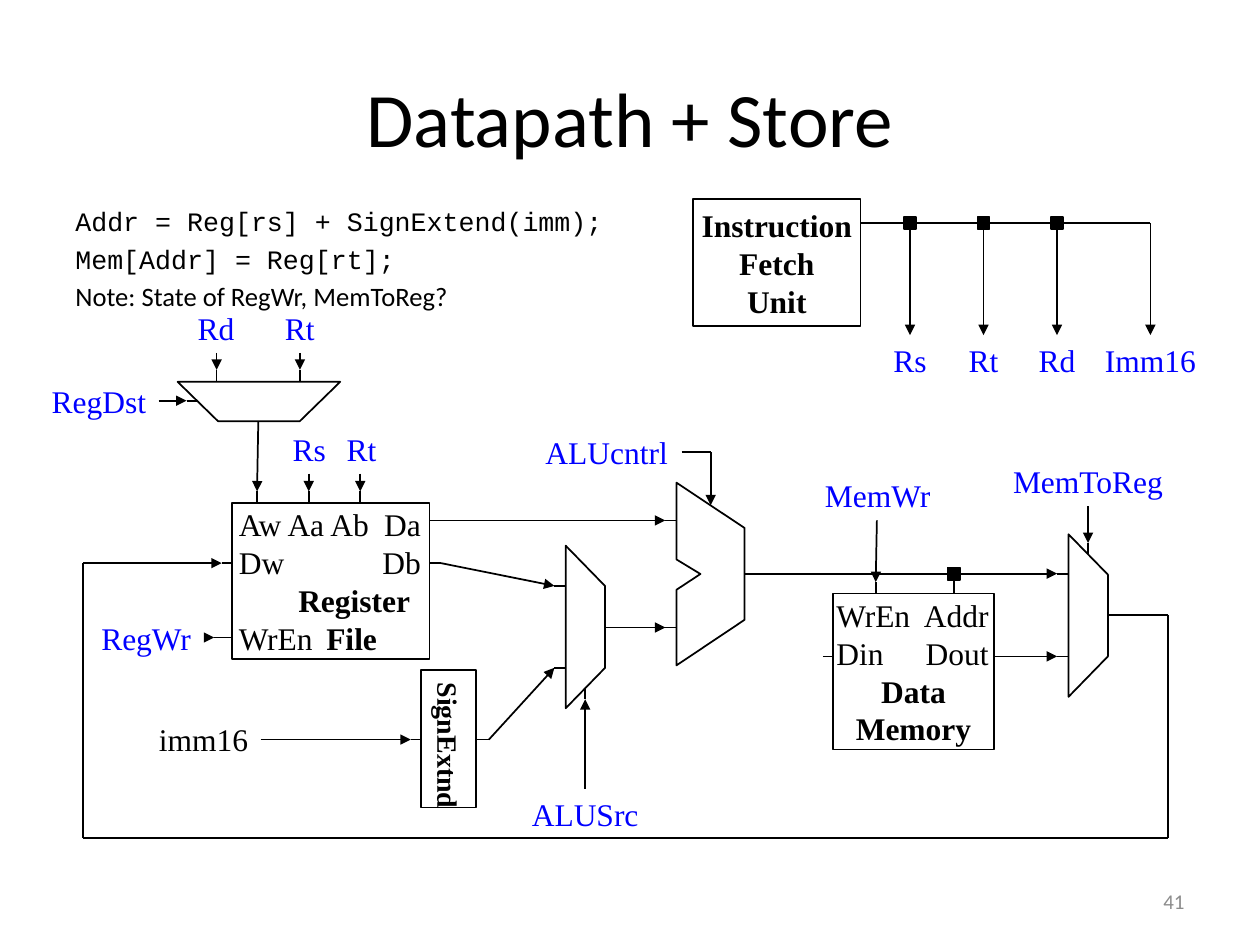
import lxml.etree
import pptx
import pptx.dml.color
import pptx.enum.shapes
import pptx.enum.text
import pptx.oxml.ns
import pptx.util

Pt = pptx.util.Pt
qn = pptx.oxml.ns.qn
ALIGN = pptx.enum.text.PP_ALIGN
MIDDLE = pptx.enum.text.MSO_ANCHOR.MIDDLE
COLORS = {"ink": "000000", "signal": "0000FF", "paper": "FFFFFF", "muted": "8C8C8C"}
SERIF, SANS, MONO = "Times New Roman", "Calibri", "Courier New"


def rgb(name):
    return pptx.dml.color.RGBColor.from_string(COLORS[name])


class DatapathSlide:
    MUX_LENGTH, MUX_DEPTH, MUX_SLANT = 92.9, 22.5, 23.1
    LABEL_HEIGHT, JUNCTION_SIZE = 28.8, 7

    def __init__(self, slide):
        self.shapes = slide.shapes

    def style(self, paragraph, font=SERIF, size=18, color="ink", bold=False, align=ALIGN.CENTER):
        paragraph.alignment = align
        paragraph.font.name = font
        paragraph.font.size = Pt(size)
        paragraph.font.bold = bold
        paragraph.font.color.rgb = rgb(color)

    def outline(self, shape, fill="paper"):
        shape.shadow.inherit = False
        shape.fill.solid()
        shape.fill.fore_color.rgb = rgb(fill)
        shape.line.color.rgb = rgb("ink")
        shape.line.width = Pt(1)

    def text(self, left, top, width, height, content, wrap=True, anchor=None, **style):
        frame = self.shapes.add_textbox(Pt(left), Pt(top), Pt(width), Pt(height)).text_frame
        frame.word_wrap = wrap
        if anchor is not None:
            frame.vertical_anchor = anchor
        frame.text = content
        self.style(frame.paragraphs[0], **style)
        return frame

    def label(self, center, top, width, name, color="signal"):
        self.text(center - width / 2, top, width, self.LABEL_HEIGHT, name, wrap=False, color=color)

    def box(self, left, top, width, height, fill="paper"):
        rectangle = self.shapes.add_shape(pptx.enum.shapes.MSO_SHAPE.RECTANGLE,
                                          Pt(left), Pt(top), Pt(width), Pt(height))
        self.outline(rectangle, fill)
        return rectangle

    def block(self, left, top, width, height, rows, inset=None, size=18):
        """Rows are (text, bold flags per tab-separated part, tab position, tab alignment)."""
        frame = self.box(left, top, width, height).text_frame
        frame.vertical_anchor = MIDDLE
        frame.word_wrap = inset is not None
        if inset is not None:
            frame.margin_left = frame.margin_right = Pt(inset)
        for index, (content, bolds, tab, tab_align) in enumerate(rows):
            row = frame.paragraphs[0] if index == 0 else frame.add_paragraph()
            if tab:
                stops = lxml.etree.SubElement(row._p.get_or_add_pPr(), qn("a:tabLst"))
                lxml.etree.SubElement(stops, qn("a:tab"), pos=str(int(Pt(tab))), algn=tab_align)
            if len(set(bolds)) == 1:
                row.add_run().text = content
            else:
                first, second = content.split("\t")
                for part, bold in zip((first + "\t", second), bolds):
                    run = row.add_run()
                    run.text = part
                    run.font.bold = bold
            self.style(row, size=size, bold=bolds[0],
                       align=ALIGN.LEFT if tab else ALIGN.CENTER)
        return frame

    def junction(self, x, y):
        half = self.JUNCTION_SIZE / 2
        self.box(x - half, y - half, self.JUNCTION_SIZE, self.JUNCTION_SIZE, fill="ink")

    def polygon(self, points):
        builder = self.shapes.build_freeform(Pt(points[0][0]), Pt(points[0][1]))
        builder.add_line_segments([(Pt(x), Pt(y)) for x, y in points[1:]], close=True)
        self.outline(builder.convert_to_shape())

    def mux(self, left, top, upright=True):
        """Trapezoid with its long side at the left if upright, else at the top."""
        profile = [(0, 0), (self.MUX_DEPTH, self.MUX_SLANT),
                   (self.MUX_DEPTH, self.MUX_LENGTH - self.MUX_SLANT), (0, self.MUX_LENGTH)]
        self.polygon([(left + d, top + s) if upright else (left + s, top + d)
                      for d, s in profile])

    def wire(self, *points, arrow=False):
        for number, (start, end) in enumerate(zip(points, points[1:]), 1):
            line = self.shapes.add_connector(pptx.enum.shapes.MSO_CONNECTOR.STRAIGHT,
                                             *(Pt(v) for v in start + end))
            line.line.color.rgb = rgb("ink")
            line.line.width = Pt(1)
            if arrow and number == len(points) - 1:
                lxml.etree.SubElement(line.line._get_or_add_ln(), qn("a:tailEnd"), type="triangle")
            lxml.etree.SubElement(line._element.spPr, qn("a:effectLst"))

    def input(self, *points):
        """Wire with its arrowhead at the start of the last stretch, the pin."""
        self.wire(*points[:-1], arrow=True)
        self.wire(*points[-2:])


def add_texts(page):
    page.text(36, 21.6, 648, 90, "Datapath + Store", anchor=MIDDLE, font=SANS, size=44)
    page.text(516.2, 500.4, 167.8, 28.8, "41", anchor=MIDDLE, font=SANS, size=12,
              color="muted", align=ALIGN.RIGHT)
    notes = page.text(36, 113.8, 347.8, 59.8, "Addr = Reg[rs] + SignExtend(imm);\n"
                      "Mem[Addr] = Reg[rt];\nNote: State of RegWr, MemToReg?")
    for note, font in zip(notes.paragraphs, (MONO, MONO, SANS)):
        page.style(note, font=font, size=15.2, align=ALIGN.LEFT)
        note.space_before = Pt(3)
    for name in (("RegDst", 56.5, 214.6, 68.4), ("Rd", 123.5, 172.8, 35.3),
                 ("Rt", 171.4, 172.8, 31.7), ("Rs", 176.8, 242, 33.8),
                 ("Rt", 206.6, 242, 31.7), ("RegWr", 83.5, 350, 66.2),
                 ("ALUSrc", 334.4, 450.7, 75.6), ("ALUcntrl", 346.7, 244, 84.2),
                 ("MemWr", 501.5, 268.6, 75.6), ("MemToReg", 621.7, 260.6, 101.5)):
        page.label(*name[1:], name[0])
    page.label(116.3, 408.2, 65.5, "imm16", color="ink")


def add_blocks(page):
    bold, plain = (True,), (False,)
    page.block(132.5, 287.3, 113, 89.3, [
        ("Aw Aa Ab\tDa", plain, 104, "r"), ("Dw\tDb", plain, 104, "r"),
        ("\tRegister", bold, 34, "l"), ("WrEn\tFile", (False, True), 50, "l")], inset=4)
    page.block(475.9, 339.1, 92.2, 89.3, [
        ("WrEn\tAddr", plain, 87, "r"), ("Din\tDout", plain, 87, "r"),
        ("Data", bold, None, None), ("Memory", bold, None, None)], inset=2)
    page.block(396, 113.8, 95.8, 72.7, [
        (word, bold, None, None) for word in ("Instruction", "Fetch", "Unit")])
    extender = page.block(240.5, 383, 31.7, 78.5, [("SignExtnd", bold, None, None)], size=16)
    extender._txBody.bodyPr.set("vert", "eaVert")
    page.polygon([(386.6, 275.8), (425.5, 301.7), (425.5, 354.2), (386.6, 380.2),
                  (386.6, 337), (400.3, 328), (386.6, 319.7)])
    page.mux(323.3, 311.8)
    page.mux(610.6, 305.3)
    page.mux(101.5, 218.2, upright=False)


def add_fetch_bus(page):
    bus_y, field_y, last_x = 127.4, 191.5, 657.4
    page.wire((491.8, bus_y), (last_x, bus_y), (last_x, field_y), arrow=True)
    page.label(last_x, field_y, 66.2, "Imm16")
    for index, (field, width) in enumerate((("Rs", 33.8), ("Rt", 31.7), ("Rd", 35.3))):
        x = 520 + 42 * index
        page.junction(x, bus_y)
        page.wire((x, bus_y), (x, field_y), arrow=True)
        page.label(x, field_y, width, field)


def add_wires(page):
    for x in (123.8, 171.4):
        page.input((x, 201.6), (x, 211.3), (x, 217.8))
    for x in (176.4, 205.9):
        page.input((x, 270.7), (x, 280.8), (x, 287.3))
    for route in (
        [(90.7, 229), (106.6, 229), (113, 229)],
        [(147.6, 240.7), (146.9, 280.8), (146.9, 287.3)],
        [(116.6, 364.3), (122.4, 364.3), (132.5, 364.3)],
        [(149, 422.6), (234.7, 422.6), (240.5, 422.6)],
        [(272.2, 422.6), (279.4, 422.6), (316.8, 381.6), (323.3, 381.6)],
        [(245.5, 321.8), (252, 321.8), (316.8, 334.8), (323.3, 334.8)],
        [(245.5, 297.4), (380.2, 297.4), (386.6, 297.4)],
        [(345.8, 358.6), (380.2, 358.6), (386.6, 358.6)],
        [(334.4, 450.7), (334.4, 399.6), (334.4, 393.1)],
        [(425.5, 327.8), (604.1, 327.8), (610.6, 327.8)],
        [(501.1, 297.4), (500.4, 332.6), (500.4, 339.1)],
        [(568.1, 375.1), (604.1, 375.1), (610.6, 375.1)],
        [(621.8, 289.4), (621.8, 310.3), (621.8, 316.8)],
        [(633.1, 351.4), (667.4, 351.4), (667.4, 478.8), (47.5, 478.8),
         (47.5, 321.8), (126.7, 321.8), (132.5, 321.8)],
    ):
        page.input(*route)
    page.wire((389.5, 258.5), (406.1, 258.5), (406.1, 288.7), arrow=True)
    page.wire((470.2, 375.1), (475.9, 375.1))
    page.wire((545, 327.8), (545, 339.1))
    page.junction(545, 327.8)


def main():
    deck = pptx.Presentation()
    deck.slide_width, deck.slide_height = Pt(720), Pt(540)
    page = DatapathSlide(deck.slides.add_slide(deck.slide_layouts[6]))
    for add_part in (add_texts, add_blocks, add_fetch_bus, add_wires):
        add_part(page)
    deck.save("out.pptx")


if __name__ == "__main__":
    main()
